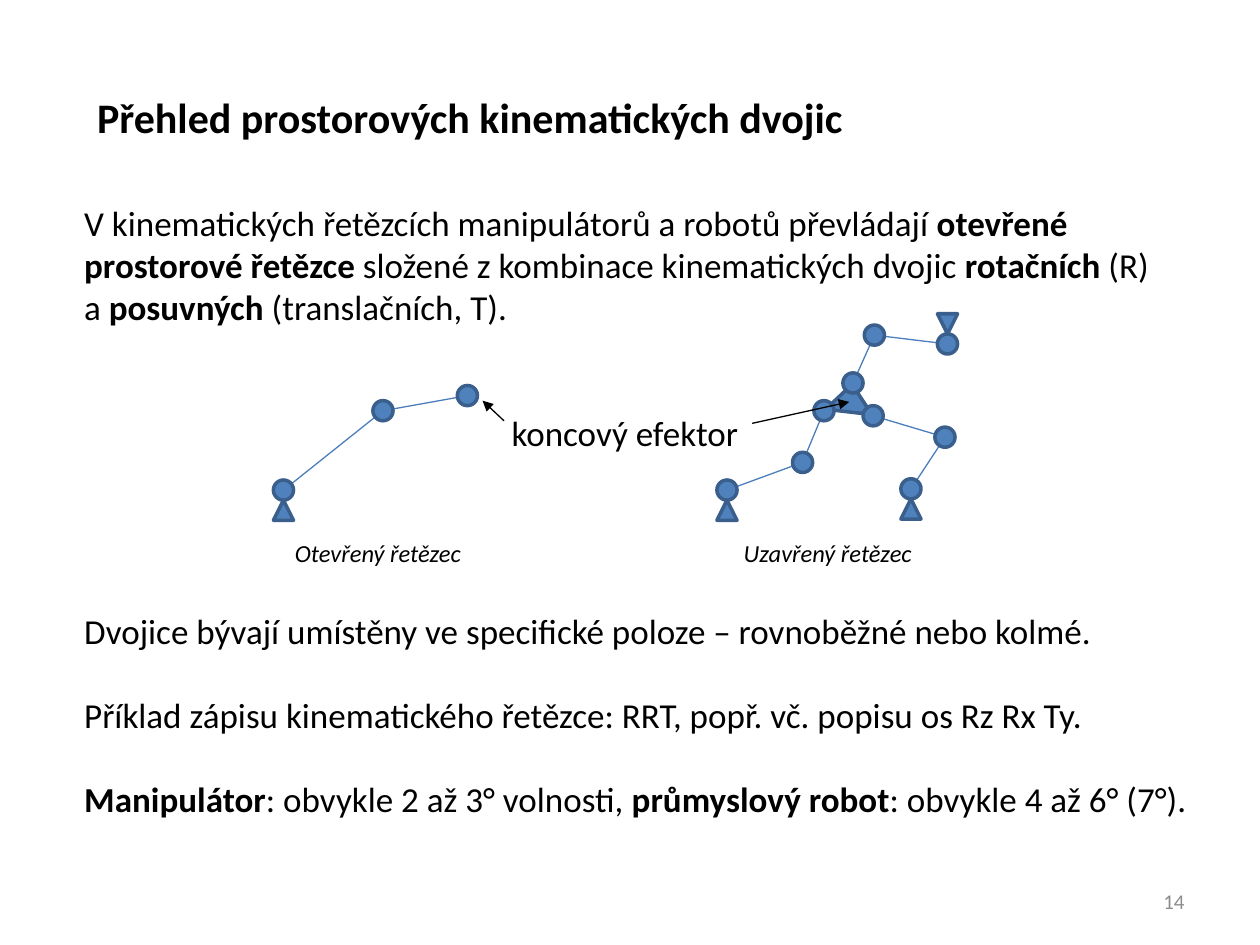
from dataclasses import dataclass

from lxml import etree
from pptx import Presentation
from pptx.dml.color import RGBColor
from pptx.enum.shapes import MSO_CONNECTOR, MSO_SHAPE
from pptx.enum.text import MSO_ANCHOR, MSO_AUTO_SIZE, PP_ALIGN
from pptx.oxml.ns import qn
from pptx.util import Inches, Pt

STRAIGHT = MSO_CONNECTOR.STRAIGHT
CIRCLE, TRIANGLE = MSO_SHAPE.OVAL, MSO_SHAPE.ISOSCELES_TRIANGLE
LEFT, CENTER, RIGHT = PP_ALIGN.LEFT, PP_ALIGN.CENTER, PP_ALIGN.RIGHT
TOP, MIDDLE = MSO_ANCHOR.TOP, MSO_ANCHOR.MIDDLE
FIXED_SIZE = MSO_AUTO_SIZE.NONE
TITLE_ONLY = 5


@dataclass(frozen=True)
class Theme:
    font: str = "Calibri"
    ink: RGBColor = RGBColor(0x00, 0x00, 0x00)
    muted: RGBColor = RGBColor(0x8C, 0x8C, 0x8C)
    fill: RGBColor = RGBColor(0x4F, 0x81, 0xBD)
    outline: RGBColor = RGBColor(0x3A, 0x5F, 0x8C)
    link: RGBColor = RGBColor(0x4B, 0x7E, 0xBC)
    title_size: int = 24
    body_size: int = 20
    caption_size: int = 14
    number_size: int = 12
    thin: float = 0.75
    thick: float = 2
    joint: float = 0.16


class SlideBuilder:
    def __init__(self, page, theme):
        self.page = page
        self.theme = theme

    def fill_frame(self, frame, lines, size, color=None, align=LEFT,
                   anchor=TOP, bold=False, italic=False, gap=0):
        """Set one paragraph per line; parts between asterisks are bold."""
        frame.word_wrap = True
        frame.auto_size = FIXED_SIZE
        frame.vertical_anchor = anchor
        for index, line in enumerate(lines):
            para = frame.add_paragraph() if index else frame.paragraphs[0]
            para.alignment = align
            para.space_before = Pt(gap if index else 0)
            for part, words in enumerate(line.split("*")):
                if not words:
                    continue
                span = para.add_run()
                span.text = words
                span.font.name = self.theme.font
                span.font.size = Pt(size)
                span.font.bold = bold or part % 2 == 1
                span.font.italic = italic
                span.font.color.rgb = color or self.theme.ink

    def title(self, words, left, top, width, height):
        box = self.page.shapes.title
        box.left, box.top = Inches(left), Inches(top)
        box.width, box.height = Inches(width), Inches(height)
        self.fill_frame(box.text_frame, [words], self.theme.title_size,
                        bold=True)

    def text(self, lines, left, top, width, height, size, **style):
        box = self.page.shapes.add_textbox(
            Inches(left), Inches(top), Inches(width), Inches(height))
        self.fill_frame(box.text_frame, lines, size, **style)

    def line(self, start, end, color):
        connector = self.page.shapes.add_connector(
            STRAIGHT, *(Inches(value) for value in (*start, *end)))
        connector.line.color.rgb = color
        connector.line.width = Pt(self.theme.thin)
        etree.SubElement(connector.element.spPr, qn("a:effectLst"))
        return connector

    def link(self, start, end):
        self.line(start, end, self.theme.link)

    def arrow(self, start, end):
        connector = self.line(start, end, self.theme.ink)
        outline = connector.element.spPr.find(qn("a:ln"))
        etree.SubElement(outline, qn("a:tailEnd"), type="triangle")

    def solid(self, kind, center, width, height, rotation=0):
        x, y = center
        shape = self.page.shapes.add_shape(
            kind, Inches(x - width / 2), Inches(y - height / 2),
            Inches(width), Inches(height))
        shape.rotation = rotation
        shape.shadow.inherit = False
        shape.fill.solid()
        shape.fill.fore_color.rgb = self.theme.fill
        shape.line.color.rgb = self.theme.outline
        shape.line.width = Pt(self.theme.thick)

    def joint(self, center):
        self.solid(CIRCLE, center, self.theme.joint, self.theme.joint)

    def support(self, center, hanging=False):
        """Put a ground triangle right below or above a joint."""
        size = self.theme.joint
        x, y = center
        self.solid(TRIANGLE, (x, y - size if hanging else y + size),
                   size, size, 180 if hanging else 0)


# Joint centres of each chain, from its support to the effector
OPEN_CHAIN = [(2.25, 3.89), (3.04, 3.26), (3.71, 3.14)]
CLOSED_LEGS = [
    [(5.77, 3.89), (6.37, 3.67), (6.54, 3.26)],
    [(7.23, 3.88), (7.5, 3.47), (6.93, 3.3)],
    [(7.52, 2.73), (6.94, 2.66), (6.77, 3.04)],
]
HANGING_LEG = CLOSED_LEGS[2]

INTRO = ("V kinematických řetězcích manipulátorů a robotů převládají "
         "*otevřené prostorové řetězce* složené z kombinace kinematických "
         "dvojic *rotačních* (R) a *posuvných* (translačních, T).")
NOTES = [
    "Dvojice bývají umístěny ve specifické poloze – rovnoběžné nebo kolmé.",
    "Příklad zápisu kinematického řetězce: RRT, popř. vč. popisu os Rz Rx Ty.",
    "*Manipulátor*: obvykle 2 až 3° volnosti, "
    "*průmyslový robot*: obvykle 4 až 6° (7°).",
]
CAPTIONS = [("Otevřený řetězec", 3.0), ("Uzavřený řetězec", 6.57)]
CAPTION_WIDTH = 2


def main():
    deck = Presentation()
    deck.slide_width, deck.slide_height = Inches(10), Inches(7.5)
    page = deck.slides.add_slide(deck.slide_layouts[TITLE_ONLY])
    theme = Theme()
    builder = SlideBuilder(page, theme)

    # Title and running text
    builder.title("Přehled prostorových kinematických dvojic",
                  0.67, 0.68, 8.82, 0.5)
    builder.text([INTRO], 0.57, 1.55, 8.7, 1.1, theme.body_size)
    builder.text(NOTES, 0.57, 4.79, 8.99, 1.8, theme.body_size, gap=24)

    # Labels of the diagram
    builder.text(["koncový efektor"], 3.86, 3.22, 2.2, 0.44,
                 theme.body_size, align=CENTER)
    for caption, center in CAPTIONS:
        builder.text([caption], center - CAPTION_WIDTH / 2, 4.22,
                     CAPTION_WIDTH, 0.34, theme.caption_size,
                     align=CENTER, italic=True)

    # Links lie under the effector plate and the joints
    chains = [OPEN_CHAIN, *CLOSED_LEGS]
    for chain in chains:
        for start, end in zip(chain, chain[1:]):
            builder.link(start, end)
    builder.solid(TRIANGLE, (6.75, 3.16), 0.37, 0.22, rotation=6.6)
    for chain in chains:
        for center in chain:
            builder.joint(center)
        builder.support(chain[0], hanging=chain is HANGING_LEG)

    # Arrows from the label to both effectors
    builder.arrow((4, 3.34), (3.83, 3.18))
    builder.arrow((5.97, 3.36), (6.74, 3.19))

    # Page number
    builder.text(["14"], 7.17, 6.95, 2.33, 0.4, theme.number_size,
                 color=theme.muted, align=RIGHT, anchor=MIDDLE)

    deck.save("out.pptx")


if __name__ == "__main__":
    main()
